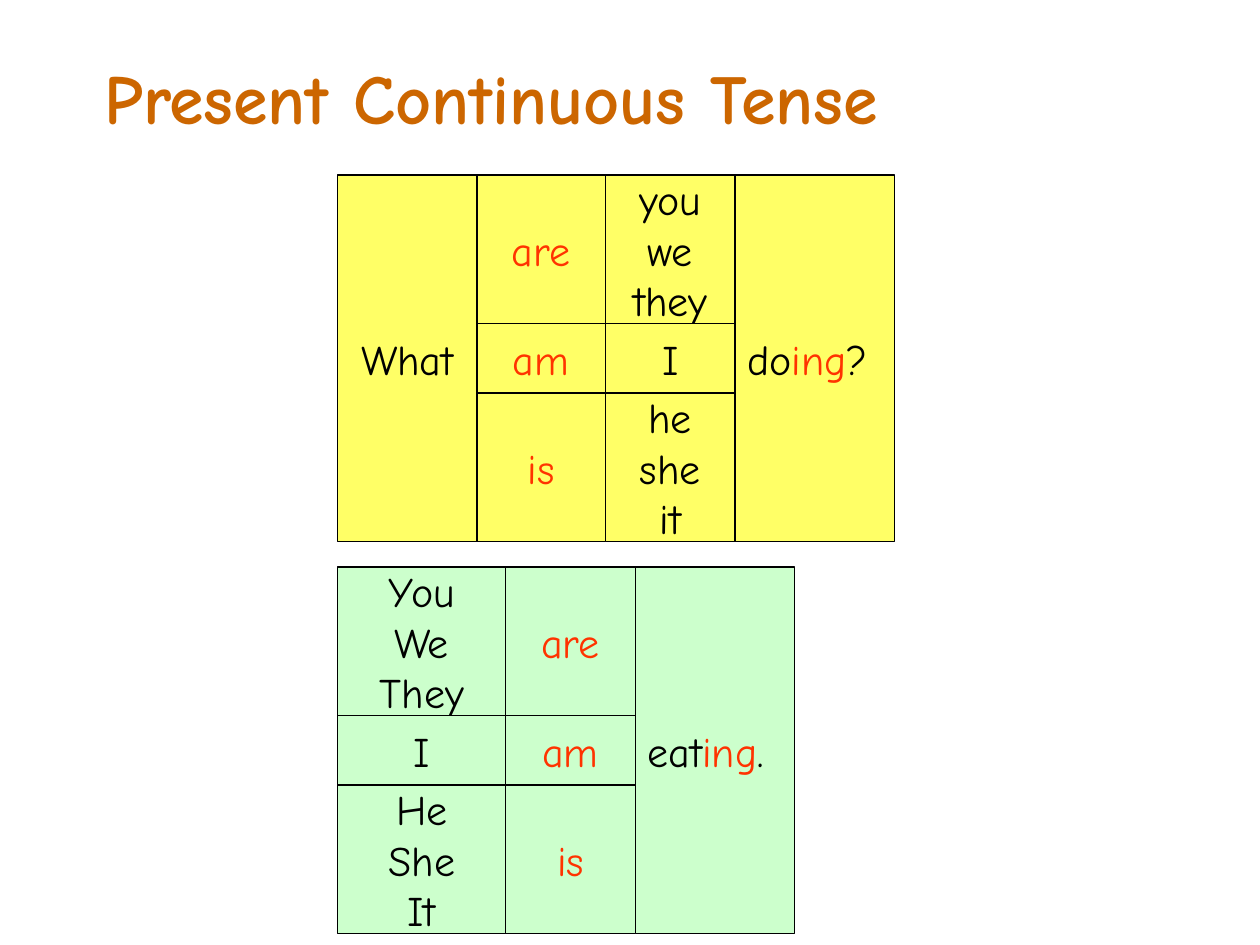
from pptx import Presentation
from pptx import util as u
from pptx.dml import color
from pptx.enum import shapes, text

FONT = "Comic Neue"
BLACK, RED, ORANGE = "000000", "FF3300", "CC6600"
YELLOW, GREEN = "FFFF66", "CCFFCC"
LEFT = 193
ROW_HEIGHTS = [85, 39.5, 85]
VERBS = [[[("are", RED)]], [[("am", RED)]], [[("is", RED)]]]


def rgb(value):
    return color.RGBColor.from_string(value)


def add_run(paragraph, words, size, ink, bold=False):
    run = paragraph.add_run()
    run.text = words
    run.font.name = FONT
    run.font.size = u.Pt(size)
    run.font.bold = bold
    run.font.color.rgb = rgb(ink)


def add_title(slide, words):
    title = slide.shapes.title
    title.left, title.top = u.Pt(52.5), u.Pt(27.5)
    title.width, title.height = u.Pt(648), u.Pt(55.5)
    frame = title.text_frame
    frame.word_wrap = True
    frame.auto_size = text.MSO_AUTO_SIZE.SHAPE_TO_FIT_TEXT
    frame.vertical_anchor = text.MSO_ANCHOR.TOP
    frame.paragraphs[0].alignment = text.PP_ALIGN.LEFT
    add_run(frame.paragraphs[0], words, 40, ORANGE, bold=True)


def add_cell(grid, bounds, lines, fill, align):
    """Draw one bordered cell; each line is a list of (words, colour)."""
    cell = grid.shapes.add_shape(shapes.MSO_SHAPE.RECTANGLE,
                                 *[u.Pt(length) for length in bounds])
    cell.shadow.inherit = False
    cell.fill.solid()
    cell.fill.fore_color.rgb = rgb(fill)
    cell.line.color.rgb = rgb(BLACK)
    cell.line.width = u.Pt(0.75)
    frame = cell.text_frame
    frame.word_wrap = True
    frame.vertical_anchor = text.MSO_ANCHOR.MIDDLE
    for index, line in enumerate(lines):
        paragraph = frame.paragraphs[0] if index == 0 else frame.add_paragraph()
        paragraph.alignment = align
        for words, ink in line:
            add_run(paragraph, words, 24, ink)


def add_sentence_grid(slide, top, fill, columns):
    """Draw columns of (width, cells, alignment); a lone cell spans all rows."""
    grid = slide.shapes.add_group_shape()
    left = LEFT
    for width, cells, align in columns:
        heights = ROW_HEIGHTS if len(cells) > 1 else [sum(ROW_HEIGHTS)]
        cell_top = top
        for lines, height in zip(cells, heights):
            add_cell(grid, (left, cell_top, width, height), lines, fill, align)
            cell_top += height
        left += width


def pronoun_cells(*groups):
    return [[[(word, BLACK)] for word in group.split()] for group in groups]


def ing_cell(stem, mark):
    return [[[(stem, BLACK), ("ing", RED), (mark, BLACK)]]]


def main():
    deck = Presentation()
    deck.slide_width, deck.slide_height = u.Pt(720), u.Pt(540)
    slide = deck.slides.add_slide(deck.slide_layouts[5])
    center, left = text.PP_ALIGN.CENTER, text.PP_ALIGN.LEFT

    add_sentence_grid(slide, 100, YELLOW, [
        (79.5, pronoun_cells("What"), center),
        (73.5, VERBS, center),
        (74, pronoun_cells("you we they", "I", "he she it"), center),
        (91, ing_cell("do", "?"), left),
    ])
    add_sentence_grid(slide, 324, GREEN, [
        (96, pronoun_cells("You We They", "I", "He She It"), center),
        (74, VERBS, center),
        (91, ing_cell("eat", "."), left),
    ])
    add_title(slide, "Present Continuous Tense")
    deck.save("out.pptx")


if __name__ == "__main__":
    main()
